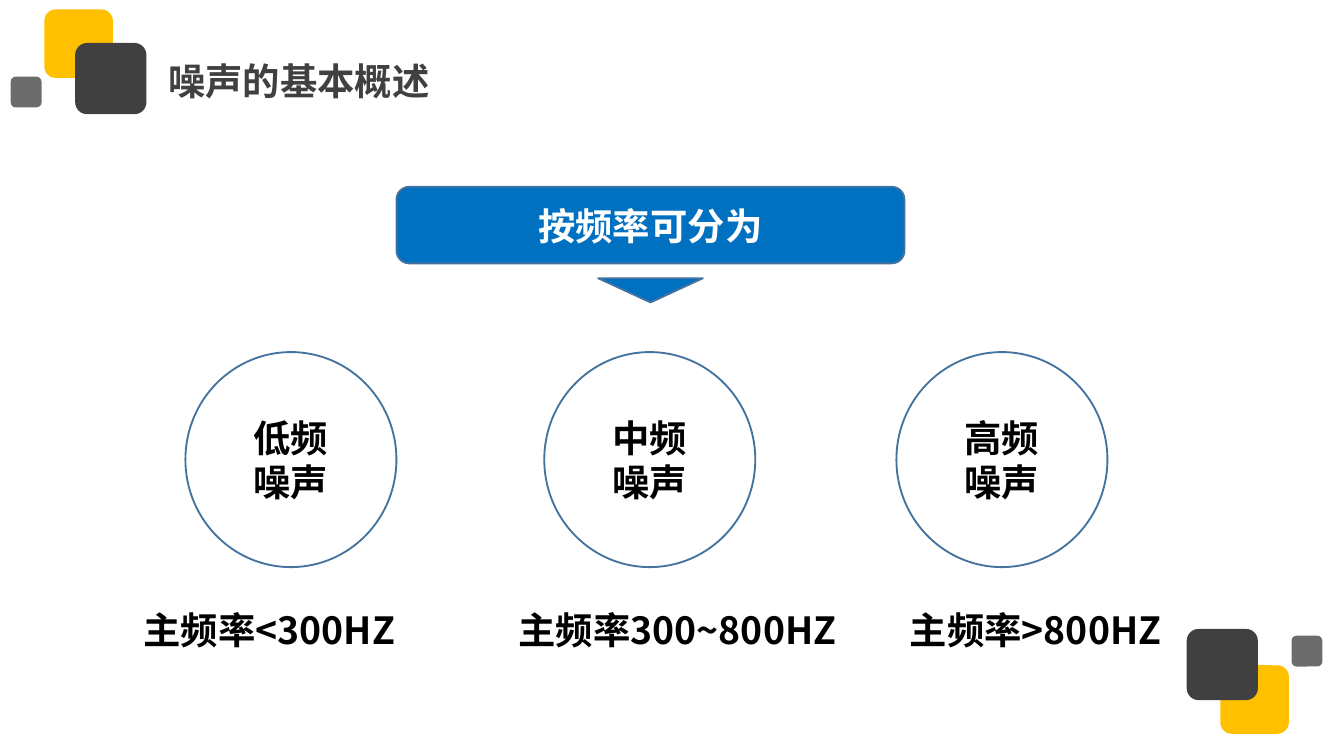
from lxml.etree import SubElement
from pptx import Presentation
from pptx.dml.color import RGBColor
from pptx.enum.shapes import MSO_SHAPE as Shape
from pptx.enum.text import MSO_ANCHOR as Anchor, MSO_AUTO_SIZE as AutoSize, PP_ALIGN as Align
from pptx.oxml.ns import qn
from pptx.util import Inches, Pt

FONT = "Noto Sans CJK SC"
AMBER = RGBColor(0xFF, 0xC0, 0x00)
CHARCOAL = RGBColor(0x40, 0x40, 0x40)
BLUE = RGBColor(0x00, 0x70, 0xC0)
OUTLINE = RGBColor(0x43, 0x73, 0x9E)
WHITE = RGBColor(0xFF, 0xFF, 0xFF)
BLACK = RGBColor(0x00, 0x00, 0x00)

# Slide in 16:9 format
SLIDE_WIDTH = Inches(10)
SLIDE_HEIGHT = SLIDE_WIDTH * 9 // 16

# Corner ornament: left, top, side, colour, opacity in percent
ORNAMENT = [
    (0.33, 0.07, 0.51, AMBER, 100),
    (0.56, 0.32, 0.53, CHARCOAL, 100),
    (0.08, 0.57, 0.23, CHARCOAL, 77),
]
MIRROR_X, MIRROR_Y = 9.92, 5.53

# Noise bands: circle left, circle text, caption left, caption
BANDS = [
    (1.38, "低频\n噪声", 0.97, "主频率<300HZ"),
    (4.05, "中频\n噪声", 3.76, "主频率300~800HZ"),
    (6.67, "高频\n噪声", 6.67, "主频率>800HZ"),
]
CIRCLE_TOP, CIRCLE_WIDTH, CIRCLE_HEIGHT = 2.62, 1.57, 1.6
CAPTION_TOP, CAPTION_WIDTH, LINE_HEIGHT = 4.47, 2.71, 0.44


def box(left, top, width, height):
    return Inches(left), Inches(top), Inches(width), Inches(height)


def write(holder, text, color, align=Align.LEFT, anchor=Anchor.TOP):
    frame = holder.text_frame
    frame.text = text
    frame.word_wrap = True
    frame.vertical_anchor = anchor
    for paragraph in frame.paragraphs:
        paragraph.alignment = align
        for run in paragraph.runs:
            font = run.font
            font.name, font.size, font.bold = FONT, Pt(20), True
            font.color.rgb = color
            # East Asian characters take their own typeface entry
            SubElement(run._r.get_or_add_rPr(), qn("a:ea"), typeface=FONT)


def add_figure(slide, preset, place, fill=None, line=None):
    figure = slide.shapes.add_shape(preset, *box(*place))
    figure.shadow.inherit = False
    if fill is None:
        figure.fill.background()
    else:
        figure.fill.solid()
        figure.fill.fore_color.rgb = fill
    if line is None:
        figure.line.fill.background()
    else:
        figure.line.color.rgb = line
        figure.line.width = Pt(1)
    return figure


def add_ornament(slide, mirrored):
    for left, top, side, color, opacity in ORNAMENT:
        if mirrored:
            left, top = MIRROR_X - left - side, MIRROR_Y - top - side
        square = add_figure(slide, Shape.ROUNDED_RECTANGLE, (left, top, side, side), color)
        if opacity < 100:
            tint = square.fill._xPr.find(".//" + qn("a:srgbClr"))
            SubElement(tint, qn("a:alpha"), val=str(opacity * 1000))


def set_title(slide, text):
    title = slide.shapes.title
    title.left, title.top, title.width, title.height = box(1.15, 0.38, 3.26, LINE_HEIGHT)
    write(title, text, CHARCOAL)
    title.text_frame.auto_size = AutoSize.NONE


def add_heading(slide, text):
    banner = add_figure(slide, Shape.ROUNDED_RECTANGLE, (2.95, 1.39, 3.78, 0.57), BLUE, OUTLINE)
    write(banner, text, WHITE, Align.CENTER, Anchor.MIDDLE)
    pointer = add_figure(slide, Shape.ISOSCELES_TRIANGLE, (4.45, 2.07, 0.78, 0.18), BLUE, OUTLINE)
    pointer.rotation = 180


def add_band(slide, circle_left, name, caption_left, caption):
    place = (circle_left, CIRCLE_TOP, CIRCLE_WIDTH, CIRCLE_HEIGHT)
    circle = add_figure(slide, Shape.OVAL, place, line=OUTLINE)
    write(circle, name, BLACK, Align.CENTER, Anchor.MIDDLE)
    label = slide.shapes.add_textbox(*box(caption_left, CAPTION_TOP, CAPTION_WIDTH, LINE_HEIGHT))
    write(label, caption, BLACK)
    label.text_frame.auto_size = AutoSize.SHAPE_TO_FIT_TEXT


def main():
    deck = Presentation()
    deck.slide_width, deck.slide_height = SLIDE_WIDTH, SLIDE_HEIGHT
    slide = deck.slides.add_slide(deck.slide_layouts.get_by_name("Title Only"))

    # Corner ornaments, the second turned half round
    for mirrored in (False, True):
        add_ornament(slide, mirrored)

    # Title and heading
    set_title(slide, "噪声的基本概述")
    add_heading(slide, "按频率可分为")

    # Frequency bands
    for band in BANDS:
        add_band(slide, *band)

    deck.save("out.pptx")


if __name__ == "__main__":
    main()
